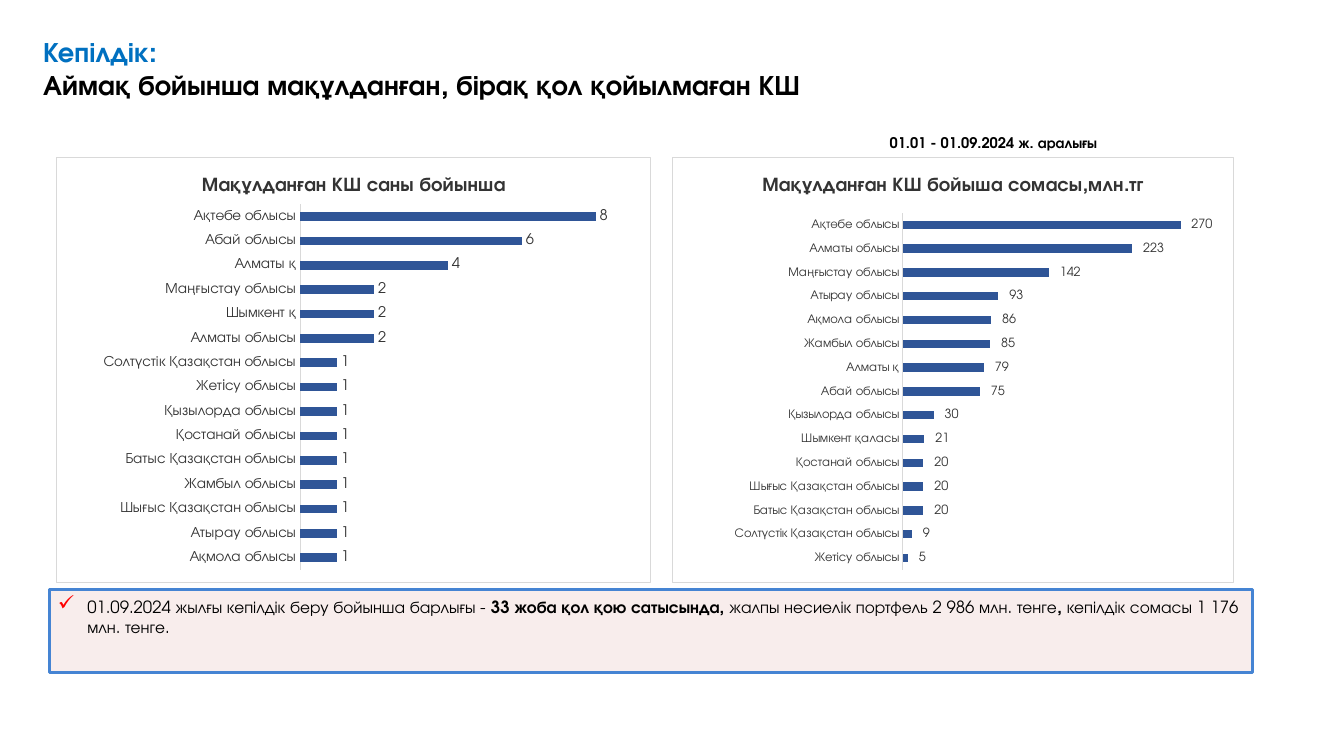
import pptx
import pptx.util
import pptx.dml.color
import pptx.chart.data
import pptx.enum.chart
import pptx.enum.shapes
import pptx.enum.text
import pptx.oxml
from pptx.oxml.ns import nsdecls, qn

# Content
FACE = "TeX Gyre Adventor"
BLACK, GREY, RULE, BAR = "000000", "333333", "D9D9D9", "2F5597"
HEAD = [("Кепілдік: ", "0070C0"),
        ("Аймақ бойынша мақұлданған, бірақ қол қойылмаған КШ", BLACK)]
DATE = "01.01 - 01.09.2024 ж. аралығы"
NOTE = [("01.09.2024 жылғы кепілдік беру бойынша барлығы - ", False),
        ("33 жоба қол қою сатысында, ", True),
        ("жалпы несиелік портфель 2 986 млн. тенге", False),
        (", ", True),
        ("кепілдік сомасы 1 176 млн. тенге.", False)]
COUNT = [("Ақмола облысы", 1), ("Атырау облысы", 1),
         ("Шығыс Қазақстан облысы", 1), ("Жамбыл облысы", 1),
         ("Батыс Қазақстан облысы", 1), ("Қостанай облысы", 1),
         ("Қызылорда облысы", 1), ("Жетiсу облысы", 1),
         ("Солтүстік Қазақстан облысы", 1), ("Алматы облысы", 2),
         ("Шымкент қ", 2), ("Маңғыстау облысы", 2), ("Алматы қ", 4),
         ("Абай облысы", 6), ("Ақтөбе облысы", 8)]
SUMS = [("Жетісу облысы", 5), ("Солтүстік Қазақстан облысы", 9),
        ("Батыс Қазақстан облысы", 20), ("Шығыс Қазақстан облысы", 20),
        ("Қостанай облысы", 20), ("Шымкент қаласы", 21),
        ("Қызылорда облысы", 30), ("Абай облысы", 75), ("Алматы қ", 79),
        ("Жамбыл облысы", 85), ("Ақмола облысы", 86), ("Атырау облысы", 93),
        ("Маңғыстау облысы", 142), ("Алматы облысы", 223),
        ("Ақтөбе облысы", 270)]
MONEY = r'_-* #\ ##0_р_._-;\-* #\ ##0_р_._-;_-* "-"??_р_._-;_-@_-'
CHARTS = [
    dict(title="Мақұлданған КШ саны бойынша", rows=COUNT, left=1.42,
         width=14.99, size=10.5, top=9, form="General",
         plot=dict(x=0.41, y=0.11, w=0.56, h=0.86)),
    dict(title="Мақұлданған КШ бойыша сомасы,млн.тг", rows=SUMS, left=16.94,
         width=14.17, size=9, top=300, form=MONEY,
         plot=dict(x=0.41, y=0.13, w=0.55, h=0.84)),
]

Cm, Pt = pptx.util.Cm, pptx.util.Pt


def paint(item, tone):
    """Colour a font, or give a fill one solid colour."""
    if hasattr(item, "solid"):
        item.solid()
        item = item.fore_color
    else:
        item = item.color
    item.rgb = pptx.dml.color.RGBColor.from_string(tone)


def apply(item, values):
    for name, value in values.items():
        setattr(item, name, value)


def style(font, size, tone, bold=False, face=FACE):
    apply(font, dict(size=Pt(size), bold=bold, name=face))
    paint(font, tone)


def stroke(line, tone, width):
    paint(line.fill, tone)
    line.width = Pt(width)


def write(para, text, *look):
    run = para.add_run()
    run.text = text
    style(run.font, *look)


def box(slide, *place):
    frame = slide.shapes.add_textbox(*map(Cm, place)).text_frame
    frame.word_wrap = True
    return frame


def frame_xml(chart, plot):
    """Fix the inner plot area and draw the chart's frame."""
    area = chart._chartSpace.chart.plotArea
    for old in area.findall(qn("c:layout")):
        area.remove(old)
    spots = "".join(f'<c:{k} val="{v}"/>' for k, v in plot.items())
    area.insert(0, pptx.oxml.parse_xml(
        f'<c:layout {nsdecls("c")}><c:manualLayout>'
        '<c:layoutTarget val="inner"/><c:xMode val="edge"/>'
        f'<c:yMode val="edge"/>{spots}</c:manualLayout></c:layout>'))
    chart._chartSpace.find(qn("c:txPr")).addprevious(pptx.oxml.parse_xml(
        f'<c:spPr {nsdecls("c", "a")}><a:solidFill><a:srgbClr val="FFFFFF"/>'
        '</a:solidFill><a:ln w="9525"><a:solidFill>'
        f'<a:srgbClr val="{RULE}"/></a:solidFill></a:ln></c:spPr>'))


def bars(slide, title, rows, left, width, size, top, form, plot):
    kinds = pptx.enum.chart
    data = pptx.chart.data.CategoryChartData()
    data.categories = [name for name, _ in rows]
    data.add_series(title, [value for _, value in rows])
    chart = slide.shapes.add_chart(
        kinds.XL_CHART_TYPE.BAR_CLUSTERED, Cm(left), Cm(3.96), Cm(width),
        Cm(10.74), data).chart
    style(chart.font, 10, BLACK, False, "Calibri")
    apply(chart, dict(has_legend=False, has_title=True))
    write(chart.chart_title.text_frame.paragraphs[0], title, 14, GREY, True)
    chart.chart_title.include_in_layout = False

    # Axes
    none = kinds.XL_TICK_MARK.NONE
    axis = chart.category_axis
    apply(axis, dict(major_tick_mark=none, minor_tick_mark=none,
                     has_major_gridlines=False))
    style(axis.tick_labels.font, size, GREY)
    stroke(axis.format.line, RULE, 0.75)
    apply(chart.value_axis, dict(visible=False, has_major_gridlines=False,
                                 minimum_scale=0, maximum_scale=top))

    # Bars and their labels
    group = chart.plots[0]
    apply(group, dict(gap_width=182, vary_by_categories=False,
                      has_data_labels=True))
    paint(group.series[0].format.fill, BAR)
    apply(group.data_labels, dict(
        show_value=True, number_format=form, number_format_is_linked=False,
        position=kinds.XL_LABEL_POSITION.OUTSIDE_END))
    style(group.data_labels.font, size, GREY)
    frame_xml(chart, plot)


def note(slide):
    shape = slide.shapes.add_shape(
        pptx.enum.shapes.MSO_SHAPE.RECTANGLE,
        *map(Cm, (1.24, 14.86, 30.33, 2.08)))
    shape.shadow.inherit = False
    paint(shape.fill, "F2DCDB")
    shape.fill._xPr.find(".//" + qn("a:srgbClr")).append(
        pptx.oxml.parse_xml(f'<a:alpha {nsdecls("a")} val="50000"/>'))
    stroke(shape.line, "4584D3", 2)
    frame = shape.text_frame
    apply(frame, dict(
        word_wrap=True, vertical_anchor=pptx.enum.text.MSO_ANCHOR.TOP,
        margin_left=Cm(0.2), margin_right=Cm(0.2), margin_top=Cm(0.18),
        margin_bottom=Cm(0.1)))
    para = frame.paragraphs[0]
    props = para._p.get_or_add_pPr()
    props.set("marL", str(Cm(0.76)))
    props.set("indent", str(Cm(-0.74)))
    for mark in ('buClr {}><a:srgbClr val="FF0000"/></a:buClr>',
                 'buSzPct {} val="125000"/>', 'buChar {} char="✓"/>'):
        props.append(pptx.oxml.parse_xml("<a:" + mark.format(nsdecls("a"))))
    para.alignment = pptx.enum.text.PP_ALIGN.LEFT
    for text, bold in NOTE:
        write(para, text, 12, BLACK, bold)


def main():
    deck = pptx.Presentation()
    apply(deck, dict(slide_width=Cm(33.87), slide_height=Cm(19.05)))
    slide = deck.slides.add_slide(deck.slide_layouts[6])

    # Heading and period
    para = box(slide, 0.84, 0.74, 22.81, 2.82).paragraphs[0]
    for i, (text, tone) in enumerate(HEAD):
        if i:
            para.add_line_break()
        write(para, text, 20, tone, True)
    frame = box(slide, 22.17, 3.25, 5.99, 0.71)
    frame.word_wrap = False
    write(frame.paragraphs[0], DATE, 10.5, BLACK, True)

    # Summary and charts
    note(slide)
    for chart in CHARTS:
        bars(slide, **chart)
    deck.save("out.pptx")


if __name__ == "__main__":
    main()
